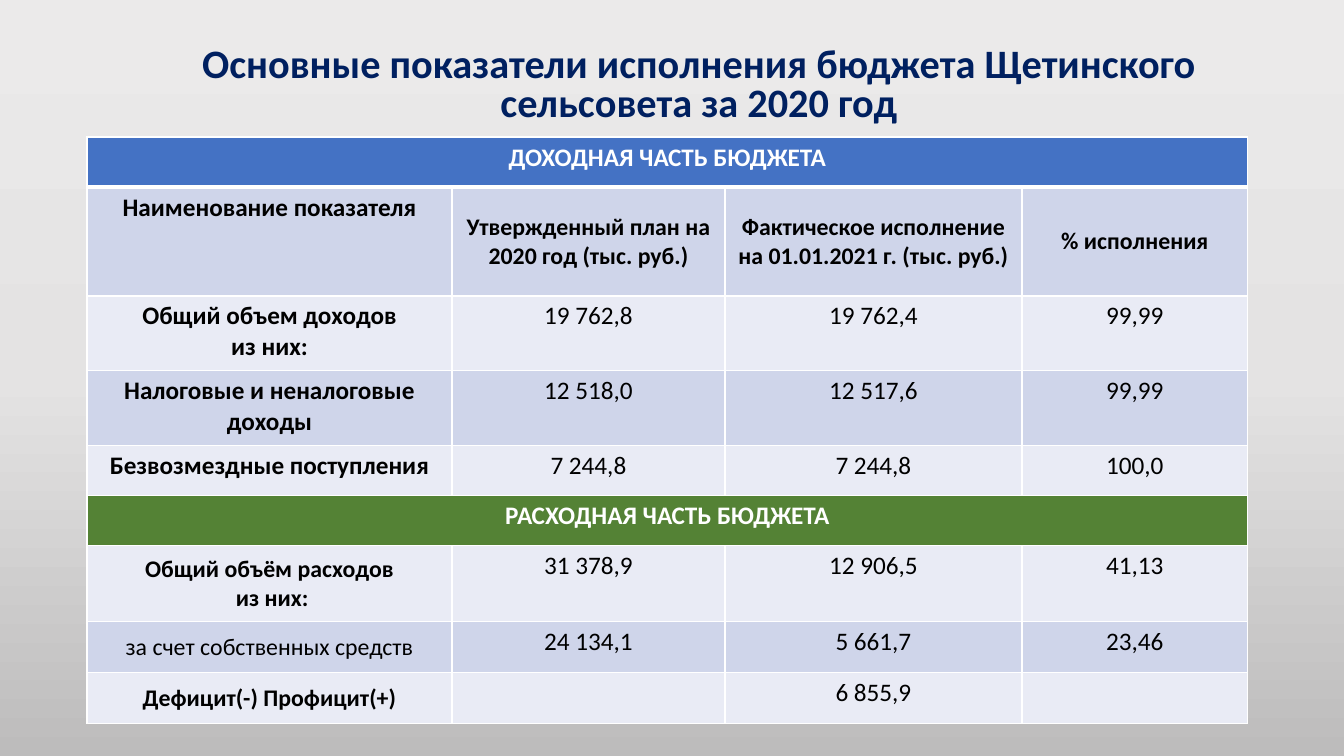
"""Budget execution slide: a title above a table of revenue and spending."""
import copy

import pptx
import pptx.dml.color
import pptx.enum.text
import pptx.oxml
import pptx.oxml.ns
import pptx.util

PX = 914400 / 100.8
COLORS = {
    "bg_top": "EBEAEA", "bg_middle": "E4E3E3", "bg_bottom": "BDBCBC",
    "title": "002060", "text": "000000", "white": "FFFFFF",
    "income": "4472C4", "spending": "548235",
    "band_dark": "CFD5EA", "band_light": "E9EBF5",
}
COL_WIDTHS = [365, 273, 297, 226]
ROW_HEIGHTS = [50, 109, 75, 75, 50, 50, 76, 51, 51]
ROWS = [
    ["ДОХОДНАЯ ЧАСТЬ БЮДЖЕТА", "", "", ""],
    ["Наименование показателя", "Утвержденный план на 2020 год (тыс. руб.)",
     "Фактическое исполнение на 01.01.2021 г. (тыс. руб.)", "% исполнения"],
    ["Общий объем доходов\nиз них:", "19 762,8", "19 762,4", "99,99"],
    ["Налоговые и неналоговые доходы", "12 518,0", "12 517,6", "99,99"],
    ["Безвозмездные поступления", "7 244,8", "7 244,8", "100,0"],
    ["РАСХОДНАЯ ЧАСТЬ БЮДЖЕТА", "", "", ""],
    ["Общий объём расходов\n из них:", "31 378,9", "12 906,5", "41,13"],
    ["за счет собственных средств", "24 134,1", "5 661,7", "23,46"],
    ["Дефицит(-) Профицит(+)", "", "6 855,9", ""],
]
SECTIONS = {0: "income", 5: "spending"}
HEADER_ROW, OWN_FUNDS_ROW = 1, 7


def px(n):
    return pptx.util.Emu(round(n * PX))


def style_text(tf, size, bold, color):
    for p in tf.paragraphs:
        p.alignment = pptx.enum.text.PP_ALIGN.CENTER
        for r in p.runs:
            r.font.name = "Calibri"
            r.font.size = pptx.util.Pt(size)
            r.font.bold = bold
            r.font.color.rgb = pptx.dml.color.RGBColor.from_string(COLORS[color])


prs = pptx.Presentation()
prs.slide_width, prs.slide_height = px(1344), px(756)
s = prs.slides.add_slide(prs.slide_layouts[6])

fill = s.background.fill
fill.gradient()
fill.gradient_angle = 270
stops = s.element.find(".//" + pptx.oxml.ns.qn("a:gsLst"))
stops.insert(1, copy.deepcopy(stops[0]))
for stop, name, position in zip(fill.gradient_stops, ["bg_top", "bg_middle", "bg_bottom"], [0, 0.5, 1]):
    stop.color.rgb = pptx.dml.color.RGBColor.from_string(COLORS[name])
    stop.position = position

title = s.shapes.add_textbox(px(92), px(33), px(1159), px(144))
tf = title.text_frame
tf.word_wrap = True
tf.vertical_anchor = pptx.enum.text.MSO_ANCHOR.BOTTOM
tf.margin_left, tf.margin_bottom = px(65), px(52)
tf.text = "Основные показатели исполнения бюджета Щетинского сельсовета за 2020 год"
tf.paragraphs[0].line_spacing = 0.8
style_text(tf, 28.8, True, "title")

table = s.shapes.add_table(len(ROWS), len(COL_WIDTHS), px(87), px(137),
                           px(sum(COL_WIDTHS)), px(sum(ROW_HEIGHTS))).table
for column, width in zip(table.columns, COL_WIDTHS):
    column.width = px(width)
for row, height in zip(table.rows, ROW_HEIGHTS):
    row.height = px(height)

for i, values in enumerate(ROWS):
    section = SECTIONS.get(i)
    band = section or ("band_dark" if i % 2 else "band_light")
    for j, value in enumerate(values):
        cell = table.cell(i, j)
        tcPr = cell._tc.get_or_add_tcPr()
        for side in "LRTB":
            thick = (i, side) in [(0, "B"), (1, "T")]
            tcPr.append(pptx.oxml.parse_xml(
                f'<a:ln{side} {pptx.oxml.ns.nsdecls("a")} w="{38100 if thick else 12700}">'
                f'<a:solidFill><a:srgbClr val="{COLORS["white"]}"/></a:solidFill></a:ln{side}>'))
        cell.fill.solid()
        cell.fill.fore_color.rgb = pptx.dml.color.RGBColor.from_string(COLORS[band])

        centered = (i == HEADER_ROW and j > 0) or (i > 5 and j == 0)
        if centered:
            cell.vertical_anchor = pptx.enum.text.MSO_ANCHOR.MIDDLE
            cell.margin_left = cell.margin_right = px(9)
            cell.margin_top = cell.margin_bottom = px(9)
        cell.text_frame.text = value
        bold = i == HEADER_ROW or (j == 0 and i != OWN_FUNDS_ROW)
        style_text(cell.text_frame, 17 if centered else 18, bold, "white" if section else "text")
    if section:
        table.cell(i, 0).merge(table.cell(i, len(values) - 1))

prs.save("out.pptx")
